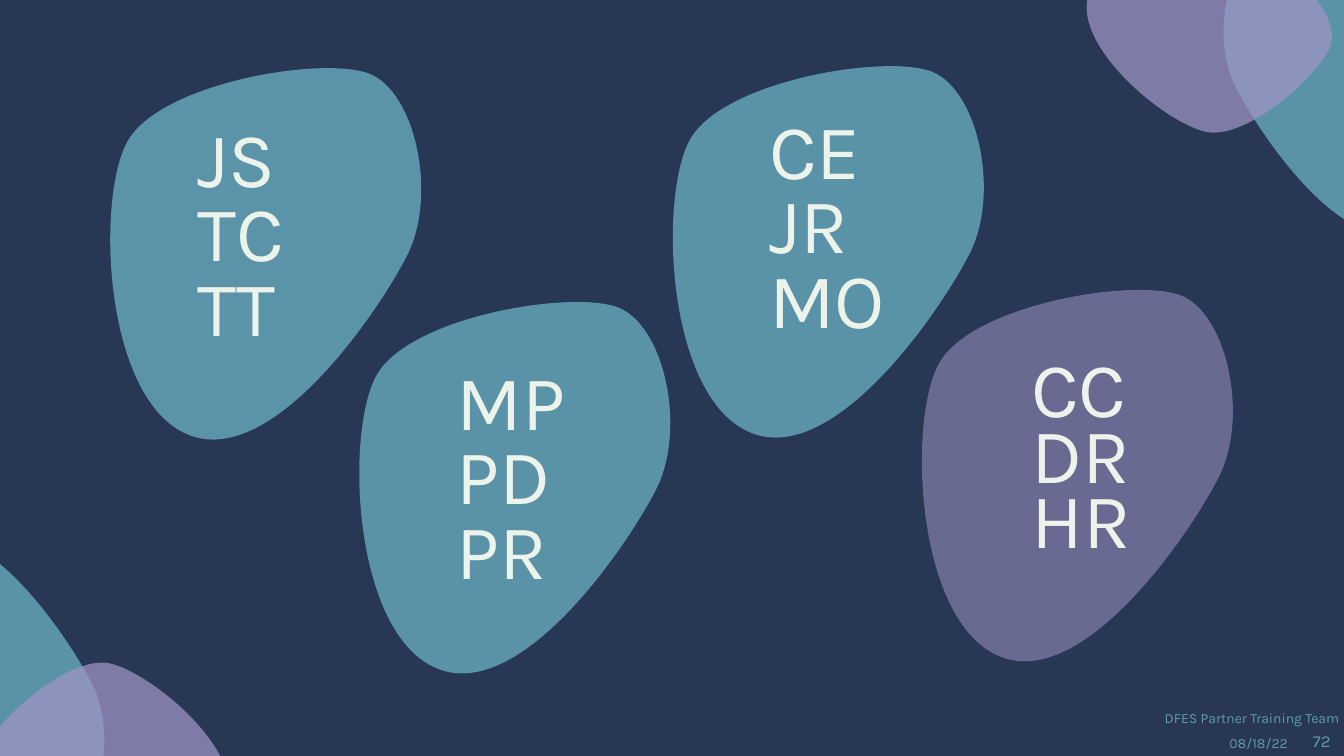
"""Build the slide of partner initials set on four rounded pebbles."""
from math import cos, radians, sin

from lxml import etree
from pptx import Presentation
from pptx.dml.color import RGBColor
from pptx.enum.text import MSO_ANCHOR, PP_ALIGN
from pptx.oxml.ns import qn
from pptx.util import Pt

LEFT, CENTER, RIGHT = PP_ALIGN.LEFT, PP_ALIGN.CENTER, PP_ALIGN.RIGHT
BOTTOM, MIDDLE = MSO_ANCHOR.BOTTOM, MSO_ANCHOR.MIDDLE
PX = 9144


class Theme:
    font = "Karla"
    background = "273754"
    teal = "6CB2C4"
    solid_teal = "5B93A8"
    lavender = "9D93C4"
    purple = "807CA8"
    footer = "629BAC"
    initials = "ECF3EA"
    small_size, number_size, initials_size = 10, 12, 55.5


def add_blob(page, outline, place, rotation, color, opacity):
    """Draw cubic curves (a start point, then three points each) in a box that is then rotated."""
    left, top, width, height = (length * PX for length in place)
    turn = radians(rotation)
    points = []
    for x, y in outline:
        across, down = x * PX - left - width / 2, y * PX - top - height / 2
        points.append((round(width / 2 + across * cos(turn) + down * sin(turn)),
                       round(height / 2 - across * sin(turn) + down * cos(turn))))
    builder = page.shapes.build_freeform(*points[0], scale=1.0)
    builder.add_line_segments(points[1:], close=True)
    blob = builder.convert_to_shape()
    blob.left, blob.top, blob.width, blob.height = left, top, width, height
    blob.rotation = rotation
    contour = blob.element.spPr.find(".//" + qn("a:path"))
    contour.set("w", str(width))
    contour.set("h", str(height))
    for vertex, (x, y) in zip(contour.iter(qn("a:pt")), points):
        vertex.set("x", str(x))
        vertex.set("y", str(y))
    for number, line in enumerate(contour.findall(qn("a:lnTo"))):
        if number % 3 == 0:
            curve = etree.SubElement(contour, qn("a:cubicBezTo"))
        curve.append(line[0])
        contour.remove(line)
    contour.append(contour.find(qn("a:close")))
    blob.shadow.inherit = False
    blob.line.fill.background()
    blob.fill.solid()
    blob.fill.fore_color.rgb = RGBColor.from_string(color)
    if opacity < 100:
        color_element = blob.element.spPr.find(qn("a:solidFill"))[0]
        etree.SubElement(color_element, qn("a:alpha"), val=str(opacity * 1000))


def add_text(page, text, place, size, color, align, anchor, spacing=None):
    """Place one paragraph of text in a box."""
    box = page.shapes.add_textbox(*(length * PX for length in place))
    frame = box.text_frame
    frame.word_wrap = True
    frame.vertical_anchor = anchor
    para = frame.paragraphs[0]
    para.text = text
    para.alignment = align
    para.line_spacing = spacing
    para.font.name = Theme.font
    para.font.size = Pt(size)
    para.font.color.rgb = RGBColor.from_string(color)


deck = Presentation()
deck.slide_width, deck.slide_height = 1333 * PX, 750 * PX
page = deck.slides.add_slide(deck.slide_layouts[6])
page.background.fill.solid()
page.background.fill.fore_color.rgb = RGBColor.from_string(Theme.background)

teal_corner = [(1253, -58), (1217, -44), (1201, 37), (1225, 85), (1249, 133), (1332, 256), (1396, 229),
               (1460, 202), (1465, 48), (1441, 0), (1417, -48), (1289, -72), (1253, -58)]
lavender_corner = [(1320, 44), (1328, 15), (1287, -32), (1246, -39), (1206, -47), (1093, -54), (1079, -3),
                   (1066, 48), (1157, 123), (1197, 131), (1237, 139), (1312, 72), (1320, 44)]
corners = [
    (teal_corner, (1187, -40, 320, 232), 247.2, Theme.teal, 1317, 765),
    (lavender_corner, (1072, -50, 245, 178), 14.6, Theme.lavender, 1305, 789),
]
for outline, place, rotation, color, _, _ in corners:
    add_blob(page, outline, place, rotation, color, 75)
for outline, (left, top, width, height), rotation, color, mirror_x, mirror_y in corners:
    mirrored = [(mirror_x - x, mirror_y - y) for x, y in outline]
    place = (mirror_x - left - width, mirror_y - top - height, width, height)
    add_blob(page, mirrored, place, rotation, color, 75)

for text, place, size, align in [
    ("08/18/22", (1194, 710, 93, 40), Theme.small_size, RIGHT),
    ("DFES Partner Training Team", (1113, 686, 225, 40), Theme.small_size, RIGHT),
    ("72", (1289, 710, 44, 40), Theme.number_size, CENTER),
]:
    add_text(page, text, place, size, Theme.footer, align, BOTTOM)

pebble = [(320, -17), (366, 1), (388, 103), (358, 163), (328, 222), (222, 376), (140, 341),
          (58, 307), (49, 113), (79, 53), (108, -7), (273, -35), (320, -17)]
for left, top, color, opacity in [
    (46, 90, Theme.solid_teal, 100),
    (604, 88, Theme.teal, 75),
    (293, 322, Theme.teal, 75),
    (851, 310, Theme.purple, 75),
]:
    outline = [(left + x, top + y) for x, y in pebble]
    add_blob(page, outline, (left, top, 400, 300), 112.8, color, opacity)

for initials, place, spacing in [
    ("CC DR HR", (1013, 346, 140, 228), 0.7),
    ("CE JR MO", (753, 105, 164, 249), 0.8),
    ("MP PDPR", (443, 358, 150, 241), 0.8),
    ("JS TC TT", (186, 117, 130, 241), 0.8),
]:
    add_text(page, initials, place, Theme.initials_size, Theme.initials, LEFT, MIDDLE, spacing)

deck.save("out.pptx")
